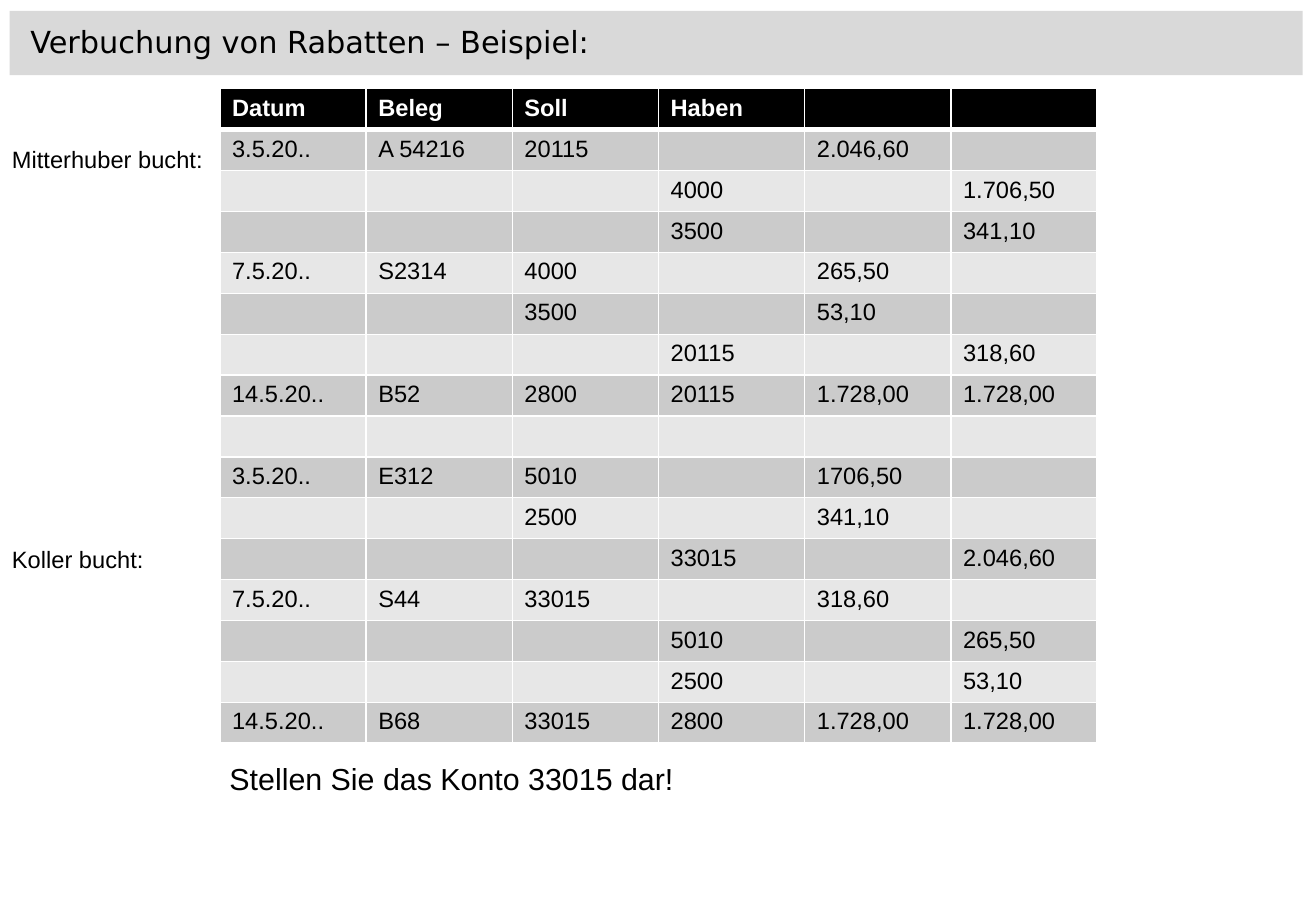
from lxml import etree
from pptx import Presentation, util as u
from pptx.dml.color import RGBColor
from pptx.enum import shapes, text
from pptx.oxml.ns import qn

PX = 9144  # 100 px to the inch


def px(*lengths):
    return [u.Emu(length * PX) for length in lengths]


def add_text(para, words, size, color, font="Arial", bold=False):
    span = para.add_run()
    span.text = words
    span.font.size = u.Pt(size)
    span.font.name = font
    span.font.bold = bold
    span.font.color.rgb = RGBColor.from_string(color)


deck = Presentation()
deck.slide_width, deck.slide_height = px(1083, 750)
page = deck.slides.add_slide(deck.slide_layouts[5])

# Title band, placed behind the title
band = page.shapes.add_shape(shapes.MSO_SHAPE.RECTANGLE, *px(8, 9, 1064, 53))
band.shadow.inherit = False
band.fill.solid()
band.fill.fore_color.rgb = RGBColor.from_string("D9D9D9")
band.line.fill.background()

title = page.shapes.title
band._element.addnext(title._element)
title.left, title.top, title.width, title.height = px(15, 14, 486, 40)
title.text_frame.word_wrap = False
title.text_frame.auto_size = text.MSO_AUTO_SIZE.NONE
title.text_frame.vertical_anchor = text.MSO_ANCHOR.TOP
heading = title.text_frame.paragraphs[0]
heading.alignment = text.PP_ALIGN.LEFT
add_text(heading, "Verbuchung von Rabatten – Beispiel:", 18, "000000", "DejaVu Sans")

# Journal entries
entries = [
    ("Datum", "Beleg", "Soll", "Haben", "", ""),
    ("3.5.20..", "A 54216", "20115", "", "2.046,60", ""),
    ("", "", "", "4000", "", "1.706,50"),
    ("", "", "", "3500", "", "341,10"),
    ("7.5.20..", "S2314", "4000", "", "265,50", ""),
    ("", "", "3500", "", "53,10", ""),
    ("", "", "", "20115", "", "318,60"),
    ("14.5.20..", "B52", "2800", "20115", "1.728,00", "1.728,00"),
    ("", "", "", "", "", ""),
    ("3.5.20..", "E312", "5010", "", "1706,50", ""),
    ("", "", "2500", "", "341,10", ""),
    ("", "", "", "33015", "", "2.046,60"),
    ("7.5.20..", "S44", "33015", "", "318,60", ""),
    ("", "", "", "5010", "", "265,50"),
    ("", "", "", "2500", "", "53,10"),
    ("14.5.20..", "B68", "33015", "2800", "1.728,00", "1.728,00"),
]
journal = page.shapes.add_table(len(entries), len(entries[0]), *px(181, 73, 722, 536)).table
journal.horz_banding = False

for row, entry in enumerate(entries):
    header = row == 0
    fill = "000000" if header else ("E7E7E7", "CBCBCB")[row % 2]
    borders = {"L": 1, "R": 1, "T": 3 if row == 1 else 1, "B": 3 if header else 1}
    for column, words in enumerate(entry):
        cell = journal.cell(row, column)
        properties = cell._tc.get_or_add_tcPr()
        for side, width in borders.items():
            border = etree.SubElement(properties, qn(f"a:ln{side}"), w=str(u.Pt(width)))
            solid = etree.SubElement(border, qn("a:solidFill"))
            etree.SubElement(solid, qn("a:srgbClr"), val="FFFFFF")
        cell.fill.solid()
        cell.fill.fore_color.rgb = RGBColor.from_string(fill)
        para = cell.text_frame.paragraphs[0]
        if words:
            add_text(para, words, 14, "FFFFFF" if header else "000000", bold=header)
        else:
            # Keeps an empty cell from stretching its row
            etree.SubElement(para._p, qn("a:endParaRPr"), sz="1400")

# Row labels and task
for words, size, place in [
    ("Mitterhuber bucht:", 14, (0, 114, 178, 34)),
    ("Koller bucht:", 14, (0, 444, 129, 34)),
    ("Stellen Sie das Konto 33015 dar!", 18, (179, 621, 389, 40)),
]:
    box = page.shapes.add_textbox(*px(*place))
    box.text_frame.word_wrap = False
    add_text(box.text_frame.paragraphs[0], words, size, "000000")

deck.save("out.pptx")
